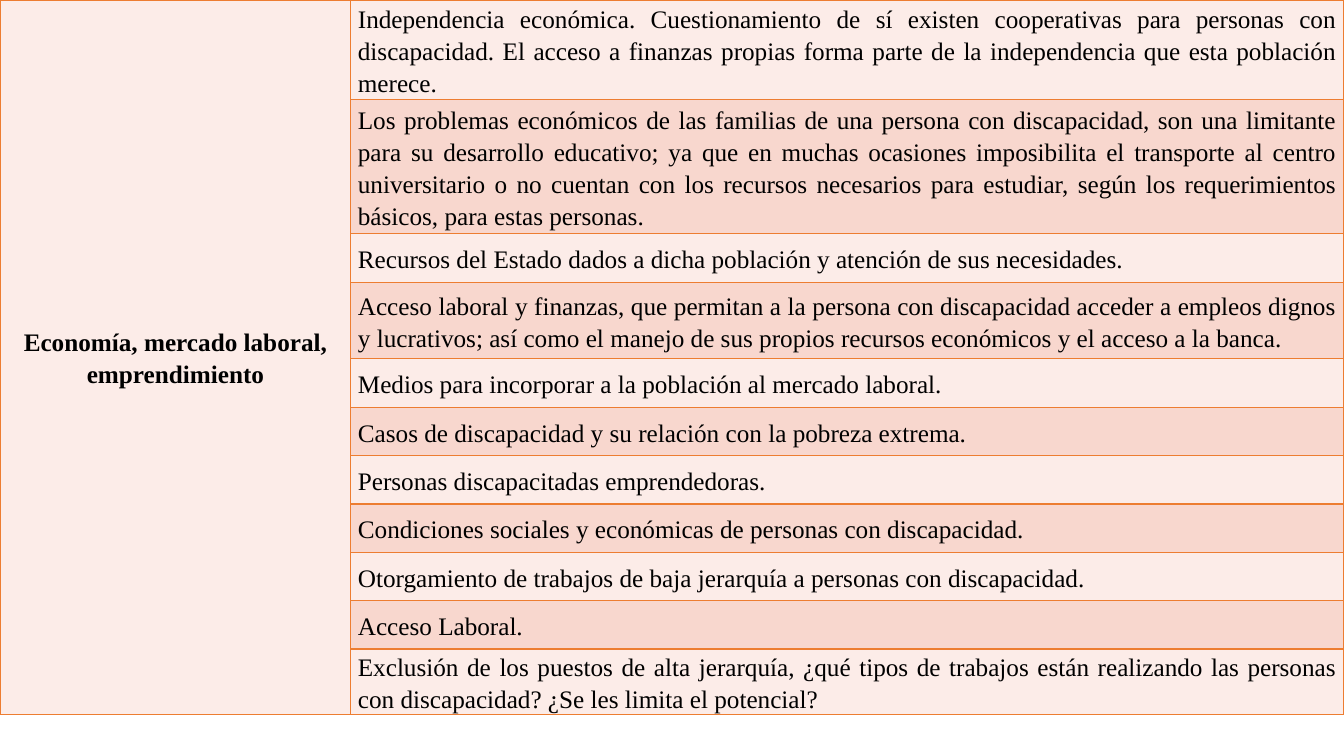
from lxml import etree
from pptx import Presentation
from pptx.dml.color import RGBColor
from pptx.enum.text import MSO_ANCHOR, PP_ALIGN
from pptx.oxml.ns import qn
from pptx.util import Pt

MIDDLE = MSO_ANCHOR.MIDDLE
CENTER, JUSTIFY = PP_ALIGN.CENTER, PP_ALIGN.JUSTIFY
PX = 9144  # EMU per px, 100 px to the inch

THEME = {
    "font": "Times New Roman",
    "size": Pt(18),
    "text": RGBColor.from_string("000000"),
    "bands": [RGBColor.from_string("FCECE8"), RGBColor.from_string("F8D7CE")],
    "border": "ED7D31",
    "border_width": Pt(1),
}

CATEGORY = "Economía, mercado laboral, emprendimiento"
# Row height in px and topic
TOPICS = [
    (99, "Independencia económica. Cuestionamiento de sí existen cooperativas para "
         "personas con discapacidad. El acceso a finanzas propias forma parte de la "
         "independencia que esta población merece."),
    (133, "Los problemas económicos de las familias de una persona con discapacidad, "
          "son una limitante para su desarrollo educativo; ya que en muchas ocasiones "
          "imposibilita el transporte al centro universitario o no cuentan con los "
          "recursos necesarios para estudiar, según los requerimientos básicos, para "
          "estas personas."),
    (48, "Recursos del Estado dados a dicha población y atención de sus necesidades."),
    (76, "Acceso laboral y finanzas, que permitan a la persona con discapacidad acceder "
         "a empleos dignos y lucrativos; así como el manejo de sus propios recursos "
         "económicos y el acceso a la banca."),
    (48, "Medios para incorporar a la población al mercado laboral."),
    (48, "Casos de discapacidad y su relación con la pobreza extrema."),
    (48, "Personas discapacitadas emprendedoras."),
    (48, "Condiciones sociales y económicas de personas con discapacidad."),
    (48, "Otorgamiento de trabajos de baja jerarquía a personas con discapacidad."),
    (48, "Acceso Laboral."),
    (65, "Exclusión de los puestos de alta jerarquía, ¿qué tipos de trabajos están "
         "realizando las personas con discapacidad? ¿Se les limita el potencial?"),
]
COLUMN_WIDTHS = [348, 985]


def style_cell(cell, fill):
    """Set the margins, borders and fill of a cell."""
    cell.margin_left = cell.margin_right = 7 * PX
    cell.margin_top = cell.margin_bottom = 0
    cell.vertical_anchor = MIDDLE
    properties = cell._tc.get_or_add_tcPr()
    for side in ("a:lnL", "a:lnR", "a:lnT", "a:lnB"):
        line = etree.SubElement(properties, qn(side), w=str(THEME["border_width"]))
        solid = etree.SubElement(line, qn("a:solidFill"))
        etree.SubElement(solid, qn("a:srgbClr"), val=THEME["border"])
    cell.fill.solid()
    cell.fill.fore_color.rgb = fill


def write_cell(cell, text, alignment, bold):
    """Put one formatted paragraph in a cell."""
    cell.text_frame.text = text
    paragraph = cell.text_frame.paragraphs[0]
    paragraph.alignment = alignment
    paragraph.line_spacing = 1.15
    paragraph.space_after = Pt(10)
    font = paragraph.runs[0].font
    font.name = THEME["font"]
    font.size = THEME["size"]
    font.bold = bold
    font.color.rgb = THEME["text"]


# Slide
presentation = Presentation()
presentation.slide_width = sum(COLUMN_WIDTHS) * PX
presentation.slide_height = 750 * PX
slide = presentation.slides.add_slide(presentation.slide_layouts[6])

# Table grid
table_height = sum(height for height, _ in TOPICS)
table = slide.shapes.add_table(
    len(TOPICS), len(COLUMN_WIDTHS), 0, 0,
    sum(COLUMN_WIDTHS) * PX, table_height * PX).table
table.first_row = table.horz_banding = False
for column, width in zip(table.columns, COLUMN_WIDTHS):
    column.width = width * PX

# Topics in alternating bands
for index, (height, topic) in enumerate(TOPICS):
    table.rows[index].height = height * PX
    style_cell(table.cell(index, 0), THEME["bands"][0])
    style_cell(table.cell(index, 1), THEME["bands"][index % 2])
    write_cell(table.cell(index, 1), topic, JUSTIFY, False)

# Category across all rows
table.cell(0, 0).merge(table.cell(len(TOPICS) - 1, 0))
write_cell(table.cell(0, 0), CATEGORY, CENTER, True)

presentation.save("out.pptx")
